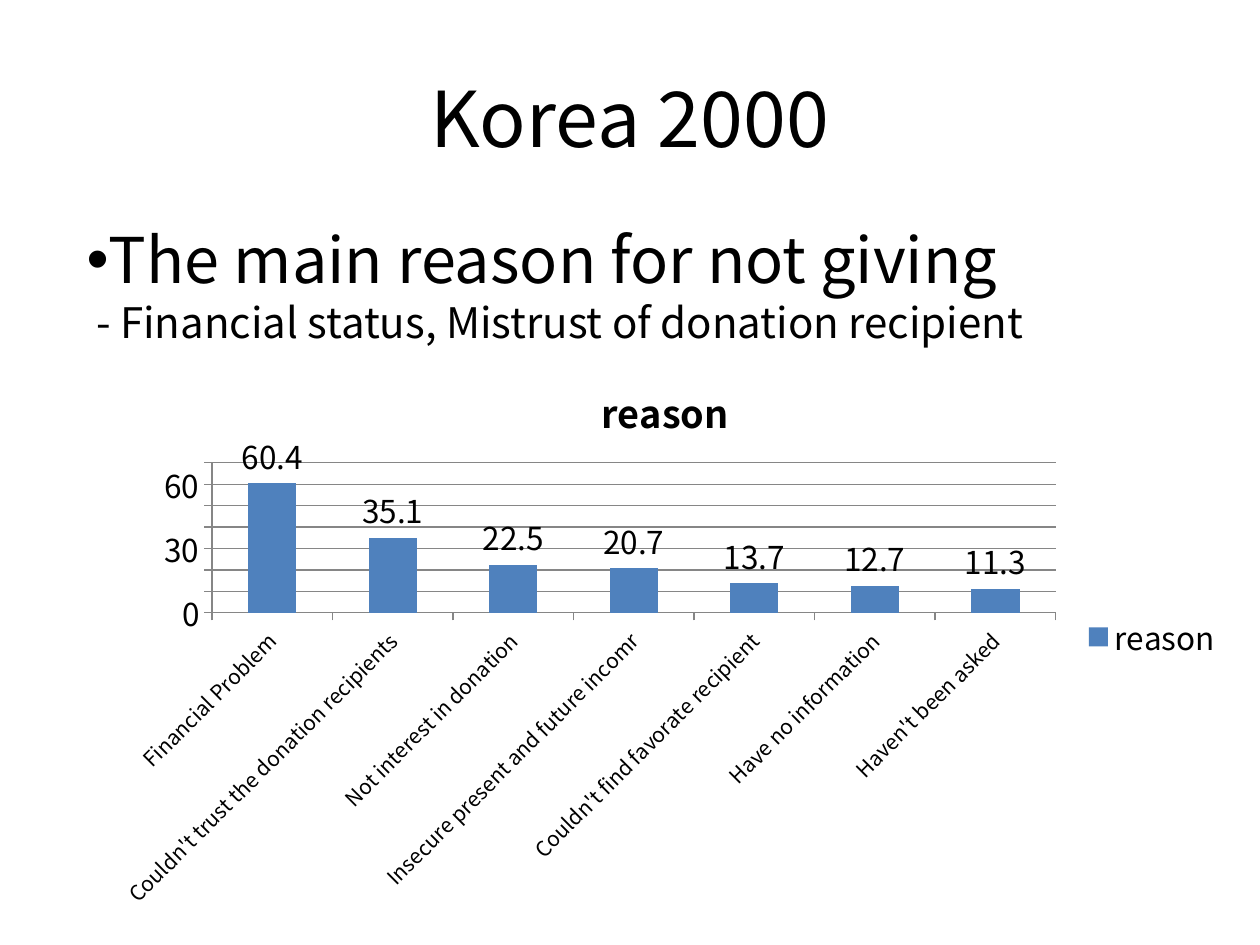
from lxml import etree
from pptx import Presentation
from pptx import util as u
from pptx.chart import data as cd
from pptx.dml import color
from pptx.enum import chart as ch, text as tx
from pptx.oxml import ns

FACE = "Noto Sans CJK KR"
BLACK, GREY, BLUE = "000000", "868686", "4F81BD"
REASONS = {
    "Financial Problem": 60.4,
    "Couldn't trust the donation recipients": 35.1,
    "Not interest in donation": 22.5,
    "Insecure present and future incomr": 20.7,
    "Couldn't find favorate recipient": 13.7,
    "Have no information": 12.7,
    "Haven't been asked": 11.3,
}


def rgb(code):
    return color.RGBColor.from_string(code)


def put(obj, **vals):
    for key, val in vals.items():
        setattr(obj, key, val)


def style(font, size, bold=False):
    put(font, name=FACE, size=u.Pt(size), bold=bold)
    font.color.rgb = rgb(BLACK)


def box(slide, area, lines, **vals):
    frame = slide.shapes.add_textbox(*map(u.Inches, area)).text_frame
    put(frame, word_wrap=True, **vals)
    for num, (words, size) in enumerate(lines):
        para = frame.add_paragraph() if num else frame.paragraphs[0]
        run = para.add_run()
        run.text = words
        style(run.font, size)
    return frame


def bullet(para):
    props = para._p.get_or_add_pPr()
    etree.SubElement(props, ns.qn("a:buFont"), typeface="Arial")
    etree.SubElement(props, ns.qn("a:buChar"), char="•")


def stroke(line):
    line.color.rgb = rgb(GREY)
    line.width = u.Pt(0.75)


def bars(slide, area, name, vals):
    data = cd.CategoryChartData()
    data.categories = list(vals)
    data.add_series(name, list(vals.values()))
    chart = slide.shapes.add_chart(
        ch.XL_CHART_TYPE.COLUMN_CLUSTERED, *map(u.Inches, area), data).chart
    style(chart.font, 18)
    put(chart, has_title=True, has_legend=True)
    head = chart.chart_title.text_frame
    head.text = name
    style(head.paragraphs[0].runs[0].font, 21.6, True)
    put(chart.legend, position=ch.XL_LEGEND_POSITION.RIGHT,
        include_in_layout=False)

    plot = chart.plots[0]
    put(plot, gap_width=150, vary_by_categories=False, has_data_labels=True)
    put(plot.data_labels, show_value=True,
        position=ch.XL_LABEL_POSITION.OUTSIDE_END)
    style(plot.data_labels.font, 18)
    fill = plot.series[0].format.fill
    fill.solid()
    fill.fore_color.rgb = rgb(BLUE)

    cat, val = chart.category_axis, chart.value_axis
    put(val, minimum_scale=0, maximum_scale=70, major_unit=10,
        has_major_gridlines=True)
    stroke(val.major_gridlines.format.line)
    for axis, size in ((cat, 12), (val, 18)):
        axis.major_tick_mark = ch.XL_TICK_MARK.OUTSIDE
        stroke(axis.format.line)
        style(axis.tick_labels.font, size)
    body = cat._element.find(ns.qn("c:txPr")).find(ns.qn("a:bodyPr"))
    body.set("rot", "-2700000")
    body.set("vert", "horz")


def main():
    deck = Presentation()
    put(deck, slide_width=u.Inches(10), slide_height=u.Inches(7.5))
    slide = deck.slides.add_slide(deck.slide_layouts[6])
    title = box(slide, (0.5, 0.3, 9, 1.25), [("Korea 2000", 44)],
                vertical_anchor=tx.MSO_ANCHOR.MIDDLE)
    title.paragraphs[0].alignment = tx.PP_ALIGN.CENTER
    notes = box(slide, (0.59, 1.7, 8.5, 1.11), [
        ("The main reason for not giving", 36),
        (" - Financial status, Mistrust of donation recipient", 24),
    ], auto_size=tx.MSO_AUTO_SIZE.SHAPE_TO_FIT_TEXT)
    bullet(notes.paragraphs[0])
    bars(slide, (0.75, 2.81, 9.06, 4.49), "reason", REASONS)
    deck.save("out.pptx")


if __name__ == "__main__":
    main()
